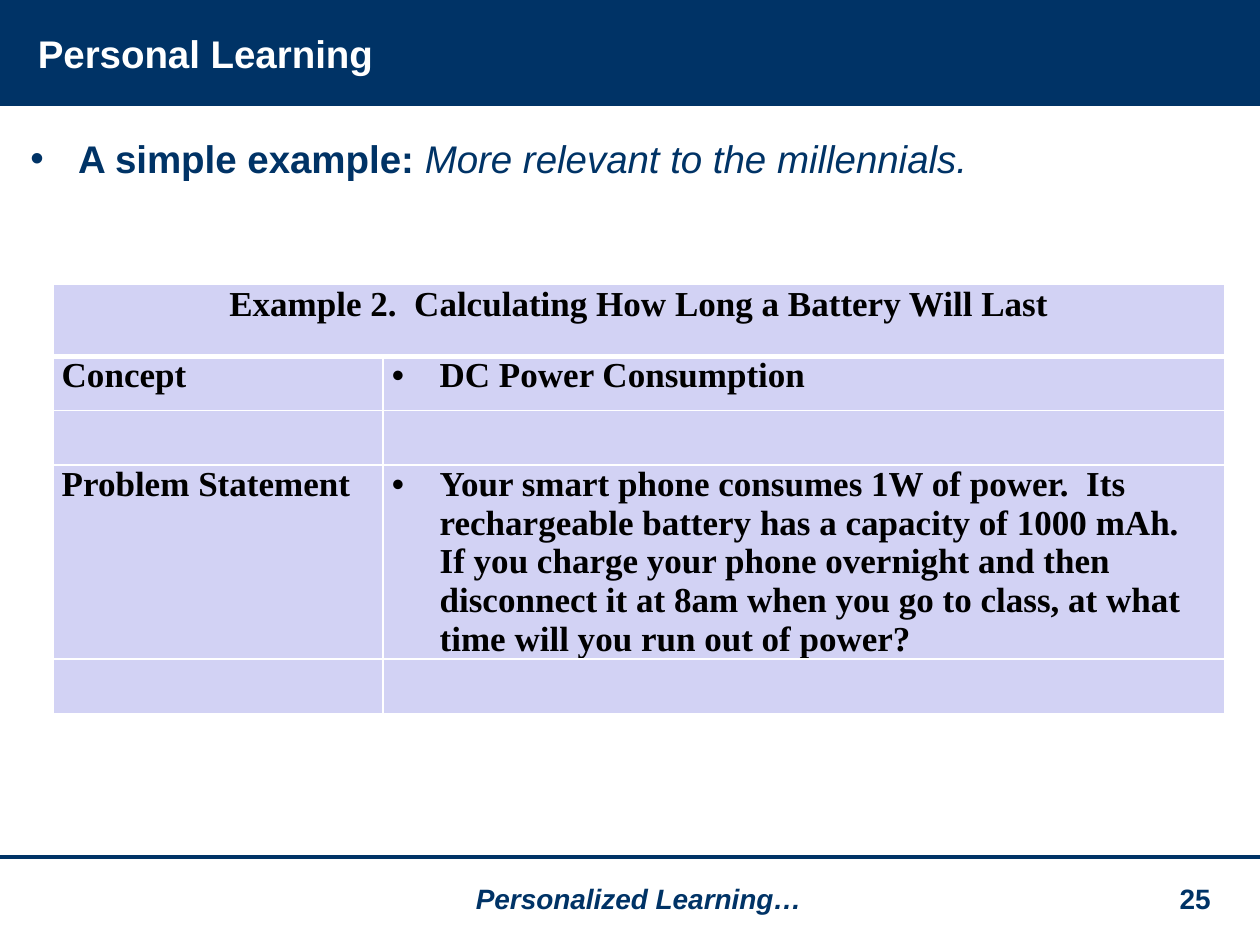
from lxml import etree
from pptx import Presentation
from pptx.dml.color import RGBColor
from pptx.enum.shapes import MSO_CONNECTOR as Connector, MSO_SHAPE as Shape
from pptx.enum.text import MSO_ANCHOR as Anchor, MSO_AUTO_SIZE as AutoSize, PP_ALIGN as Align
from pptx.oxml.ns import qn
from pptx.util import Inches, Pt

NAVY, WHITE, BLACK, LAVENDER = "003366", "FFFFFF", "000000", "D2D2F4"
ROWS = [
    ("Concept", "DC Power Consumption"),
    ("", ""),
    ("Problem Statement",
     "Your smart phone consumes 1W of power.  Its rechargeable battery has a capacity "
     "of 1000 mAh.  If you charge your phone overnight and then disconnect it at 8am "
     "when you go to class, at what time will you run out of power?"),
    ("", ""),
]


def rgb(value):
    """Return the colour for a hex string."""
    return RGBColor.from_string(value)


def style(run, size, color, name="Arial", bold=True, italic=False):
    """Format one run."""
    font = run.font
    font.size, font.name, font.bold, font.italic = Pt(size), name, bold, italic
    font.color.rgb = rgb(color)


def place(shape, box):
    """Move a shape to a box given in inches."""
    shape.left, shape.top, shape.width, shape.height = map(Inches, box)


def add_bullet(paragraph, indent):
    """Give a paragraph a round bullet with a hanging indent."""
    properties = paragraph._p.get_or_add_pPr()
    properties.set("marL", str(Inches(indent)))
    properties.set("indent", str(-Inches(indent)))
    etree.SubElement(properties, qn("a:buFont")).set("typeface", "Arial")
    etree.SubElement(properties, qn("a:buChar")).set("char", "•")


def add_header(slide, box):
    """Draw the header band and set the title on it."""
    left, top, width, height = box
    band = slide.shapes.add_shape(Shape.RECTANGLE, *map(Inches, box))
    band.shadow.inherit = False
    band.fill.solid()
    band.fill.fore_color.rgb = rgb(NAVY)
    band.line.fill.background()
    tree = slide.shapes._spTree
    tree.remove(band._element)
    tree.insert(2, band._element)

    title = slide.shapes.title
    place(title, (left + 0.2, top + 0.21, 6.01, height / 2))
    frame = title.text_frame
    frame.text = "Personal Learning"
    frame.auto_size = AutoSize.NONE
    frame.vertical_anchor = Anchor.MIDDLE
    frame.paragraphs[0].alignment = Align.LEFT
    style(frame.paragraphs[0].runs[0], 22, WHITE)


def add_body(slide, box):
    """Fill the body placeholder with the lead bullet."""
    body = slide.placeholders[1]
    place(body, box)
    frame = body.text_frame
    frame.auto_size = AutoSize.NONE
    lead = frame.paragraphs[0]
    add_bullet(lead, 0.38)
    lead.space_before = Pt(0)
    label, remark = lead.add_run(), lead.add_run()
    label.text = "A simple example: "
    remark.text = "More relevant to the millennials."
    style(label, 22, NAVY)
    style(remark, 22, NAVY, bold=False, italic=True)


def set_border(cell, side, width):
    """Draw one white edge of a cell; side is L, R, T or B."""
    properties = cell._tc.get_or_add_tcPr()
    edge = etree.Element(qn(f"a:ln{side}"), w=str(Pt(width)))
    fill = etree.SubElement(edge, qn("a:solidFill"))
    etree.SubElement(fill, qn("a:srgbClr")).set("val", WHITE)
    properties.insert("LRTB".index(side), edge)


def fill_cell(cell, text, align=Align.LEFT, bullet=False):
    """Write and format the text of a cell."""
    if not text:
        return
    cell.margin_left = cell.margin_right = Inches(0.07)
    cell.margin_top = cell.margin_bottom = 0
    cell.text_frame.text = text
    paragraph = cell.text_frame.paragraphs[0]
    if bullet:
        add_bullet(paragraph, 0.38)
    paragraph.alignment = align
    style(paragraph.runs[0], 20, BLACK, "Times New Roman")


def add_example(slide, box):
    """Build the example table with its merged heading row."""
    heights = [0.57, 0.43, 0.43, 1.54, 0.43]
    table = slide.shapes.add_table(len(heights), 2, *map(Inches, box)).table
    table.first_row = table.horz_banding = False
    for column, share in zip(table.columns, (2.62, 6.68)):
        column.width = Inches(share)
    for row, height in zip(table.rows, heights):
        row.height = Inches(height)

    for index, row in enumerate(table.rows):
        for cell in row.cells:
            cell.fill.solid()
            cell.fill.fore_color.rgb = rgb(LAVENDER)
            for side in "LRTB":
                heading_edge = (index, side) in ((0, "B"), (1, "T"))
                set_border(cell, side, 3 if heading_edge else 1)

    heading = table.cell(0, 0)
    heading.merge(table.cell(0, 1))
    fill_cell(heading, "Example 2.  Calculating How Long a Battery Will Last", Align.CENTER)
    for index, (label, detail) in enumerate(ROWS, start=1):
        fill_cell(table.cell(index, 0), label)
        fill_cell(table.cell(index, 1), detail, bullet=True)


def add_footer(slide, box):
    """Draw the footer rule, the running title and the page number."""
    left, top, width, height = box
    rule = slide.shapes.add_connector(
        Connector.STRAIGHT, *map(Inches, (left, top, left + width, top)))
    rule.line.color.rgb = rgb(NAVY)
    rule.line.width = Pt(2)
    etree.SubElement(rule._element.spPr, qn("a:effectLst"))
    for text, offset, span, italic in (
            ("Personalized Learning…", 2.4, 5.34, True), ("25", 9.13, 0.71, False)):
        note = slide.shapes.add_textbox(
            *map(Inches, (left + offset, top + 0.15, span, 0.37)))
        frame = note.text_frame
        frame.word_wrap = True
        frame.text = text
        frame.paragraphs[0].alignment = Align.CENTER
        style(frame.paragraphs[0].runs[0], 16, NAVY, italic=italic)


def main():
    """Build and save the slide."""
    deck = Presentation()
    deck.slide_width, deck.slide_height = Inches(10), Inches(7.5)
    slide = deck.slides.add_slide(deck.slide_layouts[1])
    add_header(slide, (0, 0, 10, 0.84))
    add_body(slide, (0.14, 1.02, 9.72, 5.62))
    add_example(slide, (0.42, 2.26, 9.3, 3.4))
    add_footer(slide, (0, 6.8, 10, 0.7))
    deck.save("out.pptx")


if __name__ == "__main__":
    main()
